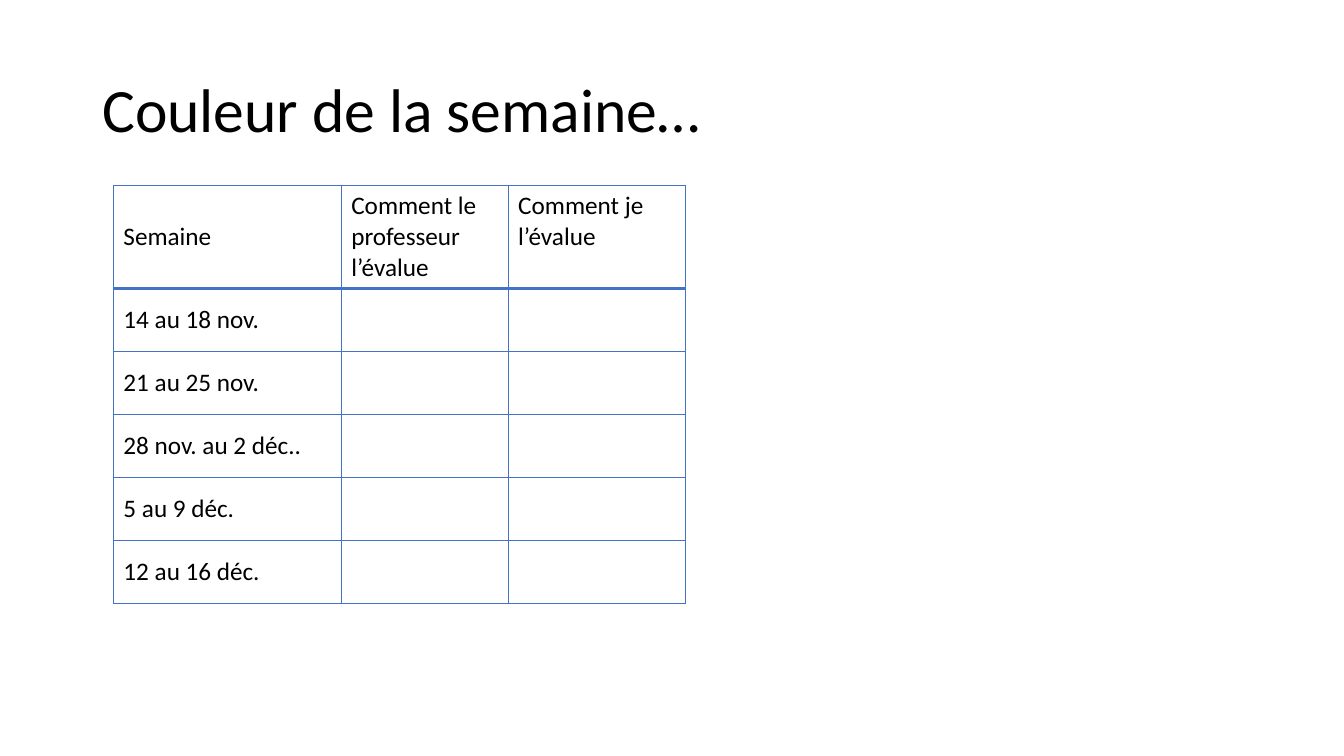
from lxml import etree
from pptx import Presentation
from pptx.dml.color import RGBColor
from pptx.enum.text import MSO_ANCHOR
from pptx.oxml.ns import qn
from pptx.util import Emu, Pt

PX = 9525  # 96 px to the inch
MIDDLE, TOP = MSO_ANCHOR.MIDDLE, MSO_ANCHOR.TOP
BLACK = RGBColor(0x00, 0x00, 0x00)
BLUE = RGBColor(0x44, 0x72, 0xC4)
FONT = "Calibri"

COLUMN_WIDTHS = [217, 159, 169]
HEADER_HEIGHT, WEEK_HEIGHT = 98, 60
HEADERS = ["Semaine", "Comment le professeur l’évalue", "Comment je l’évalue"]
WEEKS = ["14 au 18 nov.", "21 au 25 nov.", "28 nov. au 2 déc..",
         "5 au 9 déc.", "12 au 16 déc."]


def px(*lengths):
    return [Emu(length * PX) for length in lengths]


def set_text(paragraph, text, size):
    paragraph.text = text
    paragraph.font.name = FONT
    paragraph.font.size = Pt(size)
    paragraph.font.bold = False
    paragraph.font.color.rgb = BLACK


presentation = Presentation()
presentation.slide_width, presentation.slide_height = px(1280, 720)
slide = presentation.slides.add_slide(presentation.slide_layouts[6])

# Title
title = slide.shapes.add_textbox(*px(88, 38, 1104, 139))
title.text_frame.word_wrap = True
title.text_frame.vertical_anchor = MIDDLE
title_paragraph = title.text_frame.paragraphs[0]
title_paragraph.line_spacing = 0.9
set_text(title_paragraph, "Couleur de la semaine…", 44)

# Table of weeks
rows = [HEADERS] + [[week, "", ""] for week in WEEKS]
table_height = HEADER_HEIGHT + WEEK_HEIGHT * len(WEEKS)
table = slide.shapes.add_table(
    len(rows), len(HEADERS),
    *px(108, 177, sum(COLUMN_WIDTHS), table_height)).table
table.first_row = False
table.horz_banding = False
for column, width in zip(table.columns, px(*COLUMN_WIDTHS)):
    column.width = width

for row_index, texts in enumerate(rows):
    height = WEEK_HEIGHT if row_index else HEADER_HEIGHT
    table.rows[row_index].height = px(height)[0]
    # The rule under the header is twice as thick as the others
    border_widths = {"a:lnL": 1, "a:lnR": 1,
                     "a:lnT": 2 if row_index == 1 else 1,
                     "a:lnB": 2 if row_index == 0 else 1}
    for column_index, text in enumerate(texts):
        cell = table.cell(row_index, column_index)
        cell.vertical_anchor = TOP if column_index else MIDDLE
        set_text(cell.text_frame.paragraphs[0], text, 18)
        cell.fill.background()
        properties = cell._tc.get_or_add_tcPr()
        for position, (side, width) in enumerate(border_widths.items()):
            line = etree.Element(qn(side), w=str(Pt(width)))
            fill = etree.SubElement(line, qn("a:solidFill"))
            etree.SubElement(fill, qn("a:srgbClr"), val=str(BLUE))
            properties.insert(position, line)

presentation.save("out.pptx")
